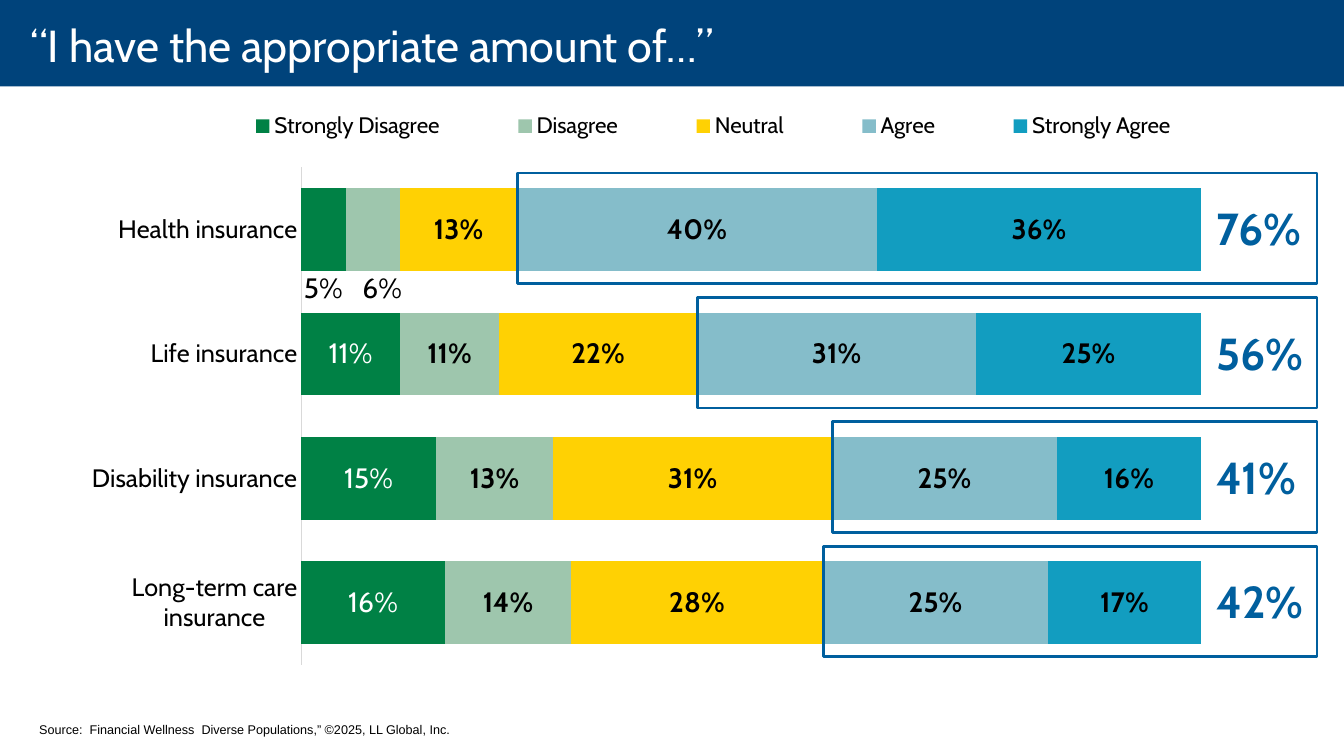
"""Build the slide on how adequate people find their insurance cover."""
from lxml.etree import SubElement
from pptx import Presentation
from pptx.chart.data import CategoryChartData
from pptx.dml.color import RGBColor
from pptx.enum.chart import XL_CHART_TYPE, XL_LABEL_POSITION, XL_LEGEND_POSITION, XL_TICK_MARK
from pptx.enum.shapes import MSO_SHAPE
from pptx.enum.text import MSO_ANCHOR, MSO_AUTO_SIZE, PP_ALIGN
from pptx.oxml.ns import qn
from pptx.util import Cm, Pt

COLORS = {
    "band": "00437B", "white": "FFFFFF", "black": "000000", "accent": "005F9E", "axis": "D9D9D9",
    "Strongly Disagree": "008145", "Disagree": "9EC6AD", "Neutral": "FFD103",
    "Agree": "85BDCA", "Strongly Agree": "129DC0",
}
CATEGORIES = ["Health insurance", "Life insurance", "Disability insurance", "Long-term care insurance"]
ANSWERS = {
    "Strongly Disagree": [0.05, 0.11, 0.15, 0.16],
    "Disagree": [0.06, 0.11, 0.13, 0.14],
    "Neutral": [0.13, 0.22, 0.31, 0.28],
    "Agree": [0.40, 0.31, 0.25, 0.25],
    "Strongly Agree": [0.36, 0.25, 0.16, 0.17],
}
AGREEING = ["Agree", "Strongly Agree"]
SMALL_SHARE = 0.1
CHART_BOX = (1.02, 2.67, 30.28, 14.48)
PLOT_LAYOUT = {"x": 0.217, "y": 0.107, "w": 0.749, "h": 0.866}
LEGEND_LAYOUT = {"x": 0.12, "y": 0, "w": 0.88, "h": 0.07}


def apply_format(target, values):
    """Set every attribute named in values on the target."""
    for name, value in values.items():
        setattr(target, name, value)


def format_font(font, size, color="black", bold=False, name="Cabin"):
    """Give a font its face, size, weight and colour."""
    apply_format(font, {"name": name, "size": Pt(size), "bold": bold})
    font.color.rgb = RGBColor.from_string(COLORS[color])


def fill_solid(fill, color):
    """Fill with one named colour."""
    fill.solid()
    fill.fore_color.rgb = RGBColor.from_string(COLORS[color])


def add_text(shapes, box, text, size, alignment=PP_ALIGN.LEFT, side_margin=0.25, **font_values):
    """Add a text box with one formatted paragraph."""
    frame = shapes.add_textbox(*map(Cm, box)).text_frame
    apply_format(frame, {
        "text": text, "word_wrap": True, "margin_left": Cm(side_margin), "margin_right": Cm(side_margin),
    })
    paragraph = frame.paragraphs[0]
    paragraph.alignment = alignment
    format_font(paragraph.font, size, **font_values)


def set_layout(element, fractions, inner=False):
    """Place a chart part by fractions of the chart area."""
    for old in element.findall(qn("c:layout")):
        element.remove(old)
    layout = SubElement(element, qn("c:layout"))
    manual = SubElement(layout, qn("c:manualLayout"))
    settings = {"layoutTarget": "inner"} if inner else {}
    settings |= {"xMode": "edge", "yMode": "edge", **fractions}
    for name, value in settings.items():
        SubElement(manual, qn(f"c:{name}")).set("val", str(value))
    element.remove(layout)
    position = 0 if inner else 1
    element.insert(position, layout)


def place_title(slide, box):
    """Set the title as a full-width band."""
    title = slide.shapes.title
    apply_format(title, dict(zip(("left", "top", "width", "height"), map(Cm, box))))
    fill_solid(title.fill, "band")
    frame = title.text_frame
    apply_format(frame, {
        "text": "“I have the appropriate amount of…”", "auto_size": MSO_AUTO_SIZE.NONE,
        "vertical_anchor": MSO_ANCHOR.MIDDLE, "word_wrap": False, "margin_left": Cm(0.76),
        "margin_right": Cm(0.51), "margin_top": Cm(0.08), "margin_bottom": 0,
    })
    paragraph = frame.paragraphs[0]
    paragraph.alignment = PP_ALIGN.LEFT
    format_font(paragraph.font, 32, "white")


def add_answer_chart(slide, box):
    """Add the stacked bars with legend and labels."""
    data = CategoryChartData(number_format="0%")
    data.categories = CATEGORIES
    for name, values in ANSWERS.items():
        data.add_series(name, values)
    chart = slide.shapes.add_chart(XL_CHART_TYPE.BAR_STACKED_100, *map(Cm, box), data).chart
    format_font(chart.font, 10, name="Arial")
    apply_format(chart, {"has_title": False, "has_legend": True})
    apply_format(chart.legend, {"position": XL_LEGEND_POSITION.TOP, "include_in_layout": False})
    format_font(chart.legend.font, 16)

    category_axis = chart.category_axis
    apply_format(category_axis, {
        "reverse_order": True, "major_tick_mark": XL_TICK_MARK.NONE, "minor_tick_mark": XL_TICK_MARK.NONE,
    })
    format_font(category_axis.tick_labels.font, 18)
    category_axis.format.line.width = Pt(0.75)
    category_axis.format.line.color.rgb = RGBColor.from_string(COLORS["axis"])
    apply_format(chart.value_axis, {
        "visible": False, "has_major_gridlines": False, "minimum_scale": 0, "maximum_scale": 1,
    })

    plot = chart.plots[0]
    apply_format(plot, {"gap_width": 50, "overlap": 100, "vary_by_categories": False})
    for series in plot.series:
        fill_solid(series.format.fill, series.name)
        labels = series.data_labels
        apply_format(labels, {
            "show_value": True, "position": XL_LABEL_POSITION.CENTER,
            "number_format": f'[>={SMALL_SHARE}]0%;""', "number_format_is_linked": False,
        })
        on_dark = series.name == "Strongly Disagree"
        format_font(labels.font, 20, "white" if on_dark else "black", bold=not on_dark)

    plot_area = chart.element.find(".//" + qn("c:plotArea"))
    set_layout(plot_area, PLOT_LAYOUT, inner=True)
    set_layout(chart.element.find(".//" + qn("c:legend")), LEGEND_LAYOUT)


def add_small_labels(slide, box):
    """Write the shares too small to label inside the first bar."""
    left, top, width, height = box
    small_shares = [values[0] for values in ANSWERS.values() if values[0] < SMALL_SHARE]
    for index, share in enumerate(small_shares):
        label_box = (left + index * width, top, width, height)
        add_text(slide.shapes, label_box, f"{share:.0%}", 20, PP_ALIGN.CENTER, side_margin=0)


def add_agreement_frame(slide, box, total):
    """Frame the agreeing part of a bar and state its total."""
    left, top, width, height = box
    total_width, total_height = 2.79, 1.63
    shapes = slide.shapes.add_group_shape().shapes
    frame = shapes.add_shape(MSO_SHAPE.RECTANGLE, *map(Cm, box))
    frame.shadow.inherit = False
    frame.fill.background()
    frame.line.width = Pt(2)
    frame.line.color.rgb = RGBColor.from_string(COLORS["accent"])
    total_box = (left + width - total_width, top + (height - total_height) / 2, total_width, total_height)
    add_text(shapes, total_box, f"{total:.0%}", 32, color="accent", bold=True)


def add_agreement_frames(slide, chart_box):
    """Add one frame per bar, starting where agreement begins."""
    chart_left, chart_top, chart_width, chart_height = chart_box
    plot_left = chart_left + PLOT_LAYOUT["x"] * chart_width
    plot_width = PLOT_LAYOUT["w"] * chart_width
    plot_top = chart_top + PLOT_LAYOUT["y"] * chart_height
    pitch = PLOT_LAYOUT["h"] * chart_height / len(CATEGORIES)
    right, height = 33.19, 2.79
    for row in range(len(CATEGORIES)):
        total = sum(ANSWERS[name][row] for name in AGREEING)
        left = plot_left + (1 - total) * plot_width
        top = plot_top + row * pitch + 0.14
        add_agreement_frame(slide, (left, top, right - left, height), total)


def main():
    """Assemble and save the slide."""
    presentation = Presentation()
    apply_format(presentation, {"slide_width": Cm(33.87), "slide_height": Cm(19.05)})
    slide = presentation.slides.add_slide(presentation.slide_layouts[5])
    place_title(slide, (0, 0, 33.87, 2.18))
    add_answer_chart(slide, CHART_BOX)
    add_small_labels(slide, (7.41, 6.7, 1.48, 1.1))
    add_agreement_frames(slide, CHART_BOX)
    source = "Source:  Financial Wellness  Diverse Populations,” ©2025, LL Global, Inc."
    add_text(slide.shapes, (0.74, 18.06, 13.18, 0.64), source, 9, name="Arial")
    presentation.save("out.pptx")


if __name__ == "__main__":
    main()
